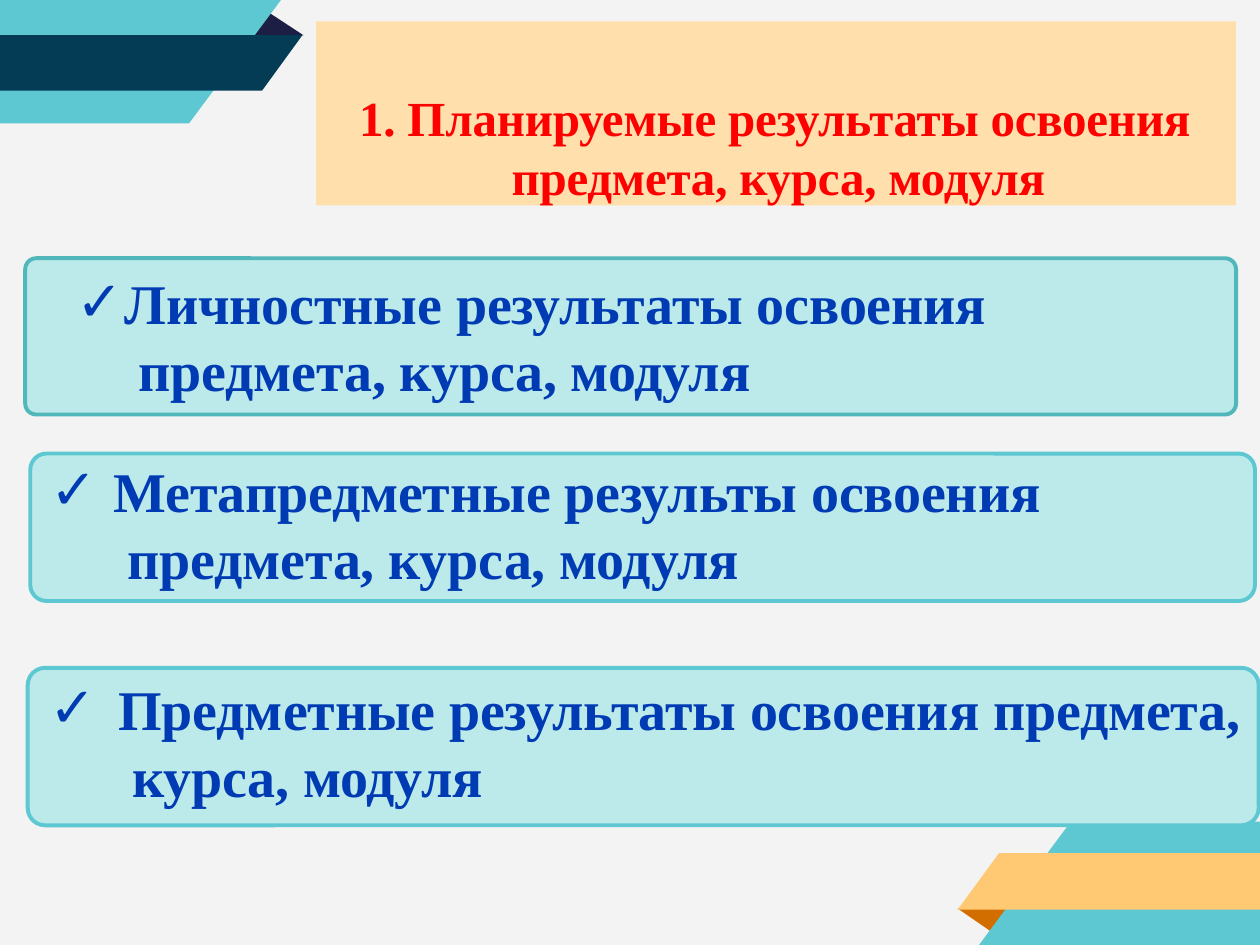
import copy

import pptx
import pptx.dml.color
import pptx.enum.shapes
import pptx.enum.text
import pptx.oxml
import pptx.oxml.ns
import pptx.util

WIDTH, HEIGHT = 10, 7.5
FONT = "Times New Roman"
COLORS = {
    "background": "F3F3F3", "teal": "5DC8D1", "deep_teal": "52B7BB",
    "pale": "BCEAEB", "navy": "043B55", "violet": "1C1F43",
    "orange": "D26D00", "amber": "FFC973", "cream": "FFDFAB",
    "red": "FF0000", "blue": "003BB4",
}

HEADING = "1. Планируемые результаты освоения предмета, курса, модуля"
RESULTS = [
    {"text": "Личностные результаты освоения\v предмета, курса, модуля",
     "margin": 0.6, "hanging": 0.38, "before": 1.1},
    {"text": "Метапредметные результы освоения\v предмета, курса, модуля",
     "margin": 0.51, "hanging": 0.5, "before": 30.5},
    {"text": "Предметные результаты освоения предмета,\v курса, модуля",
     "margin": 0.55, "hanging": 0.55, "before": 48},
]
PANELS = [
    ((0.2, 2.05, 9.61, 1.24), "deep_teal", 0.07),
    ((0.24, 3.6, 9.72, 1.17), "teal", 0.11),
    ((0.22, 5.3, 9.77, 1.25), "teal", 0.11),
]
RIBBONS = [
    ("violet", [(2.12, 0.09), (1.98, 0.28), (2.41, 0.28)]),
    ("teal", [(0, 0), (2.23, 0), (1.5, 0.98), (0, 0.98)]),
    ("navy", [(0, 0.28), (2.4, 0.28), (2.08, 0.72), (0, 0.72)]),
    ("orange", [(8.03, 7.21), (7.6, 7.21), (7.89, 7.41)]),
    ("teal", [(WIDTH, 6.52), (8.5, 6.52), (7.77, HEIGHT), (WIDTH, HEIGHT)]),
    ("amber", [(WIDTH, 6.77), (7.93, 6.77), (7.6, 7.22), (WIDTH, 7.22)]),
]


def rgb(name):
    return pptx.dml.color.RGBColor.from_string(COLORS[name])


def paint(shape, fill, line=None):
    shape.shadow.inherit = False
    shape.fill.solid()
    shape.fill.fore_color.rgb = rgb(fill)
    if line:
        shape.line.color.rgb = rgb(line)
        shape.line.width = pptx.util.Pt(2.25)
    else:
        shape.line.fill.background()


def place(placeholder, box, anchor):
    placeholder.left, placeholder.top, placeholder.width, placeholder.height = map(
        pptx.util.Inches, box)
    frame = placeholder.text_frame
    frame.margin_left = frame.margin_right = frame.margin_top = frame.margin_bottom = 0
    frame.word_wrap = True
    frame.auto_size = pptx.enum.text.MSO_AUTO_SIZE.NONE
    frame.vertical_anchor = anchor
    return frame


def write(paragraph, text, *, size, color, margin, hanging, before=0, bullet=None):
    paragraph.text = text
    paragraph.alignment = pptx.enum.text.PP_ALIGN.LEFT
    paragraph.line_spacing = 1.0
    paragraph.space_before = pptx.util.Pt(before)
    for run in paragraph.runs:
        run.font.name = FONT
        run.font.size = pptx.util.Pt(size)
        run.font.bold = True
        run.font.color.rgb = rgb(color)
        run._r.rPr.set("spc", "-10")
    for line_break in paragraph._p.findall(pptx.oxml.ns.qn("a:br")):
        line_break.insert(0, copy.deepcopy(paragraph.runs[0]._r.rPr))
    properties = paragraph._p.get_or_add_pPr()
    properties.set("marL", str(pptx.util.Inches(margin)))
    properties.set("indent", str(-pptx.util.Inches(hanging)))
    if bullet:
        mark = pptx.oxml.parse_xml(
            f'<a:buChar {pptx.oxml.ns.nsdecls("a")} char="{bullet}"/>')
        properties.append(mark)


def main():
    deck = pptx.Presentation()
    deck.slide_width = pptx.util.Inches(WIDTH)
    deck.slide_height = pptx.util.Inches(HEIGHT)
    slide = deck.slides.add_slide(deck.slide_layouts[1])
    slide.background.fill.solid()
    slide.background.fill.fore_color.rgb = rgb("background")
    heading, results = slide.placeholders

    for color, corners in RIBBONS:
        points = [(round(x * 100), round(y * 100)) for x, y in corners]
        outline = slide.shapes.build_freeform(
            *points[0], scale=float(pptx.util.Inches(0.01)))
        outline.add_line_segments(points[1:], close=True)
        paint(outline.convert_to_shape(), color)

    for box, line, roundness in PANELS:
        panel = slide.shapes.add_shape(
            pptx.enum.shapes.MSO_SHAPE.ROUNDED_RECTANGLE,
            *map(pptx.util.Inches, box))
        panel.adjustments[0] = roundness
        paint(panel, "pale", line)

    heading_frame = place(heading, (2.51, 0.17, 7.3, 1.46),
                          pptx.enum.text.MSO_ANCHOR.BOTTOM)
    heading.fill.solid()
    heading.fill.fore_color.rgb = rgb("cream")
    write(heading_frame.paragraphs[0], HEADING, size=28, color="red",
          margin=1.55, hanging=1.21)

    results_frame = place(results, (0.39, 2.13, 9.54, 4.27),
                          pptx.enum.text.MSO_ANCHOR.TOP)
    for index, result in enumerate(RESULTS):
        paragraph = (results_frame.add_paragraph() if index
                     else results_frame.paragraphs[0])
        write(paragraph, size=32, color="blue", bullet="✓", **result)
    slide.shapes._spTree.append(results._element)

    deck.save("out.pptx")


if __name__ == "__main__":
    main()
